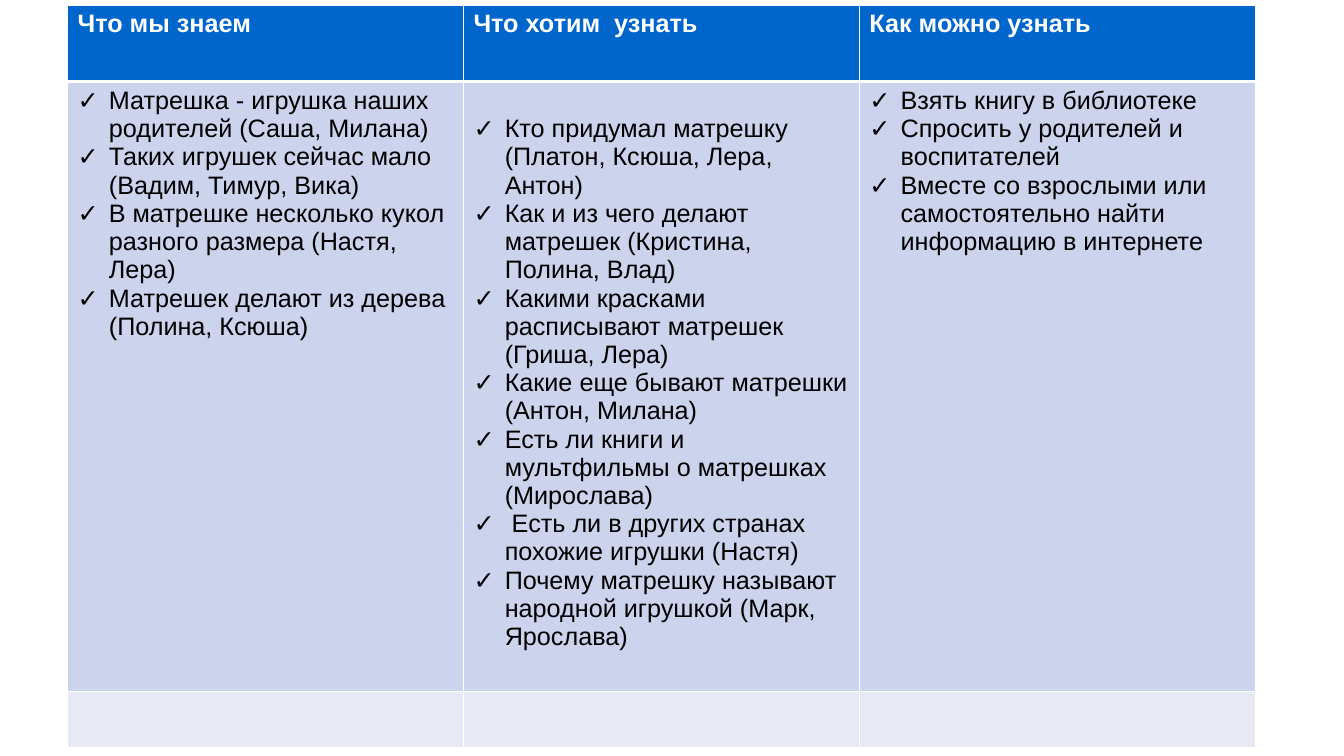
from lxml import etree
from pptx import Presentation
from pptx.dml.color import RGBColor as RGB
from pptx.oxml.ns import qn
from pptx.util import Inches as In, Pt

HUES = {"head": "0066CC", "body": "CCD3EC", "foot": "E7EAF5",
        "line": "FFFFFF", "light": "FFFFFF", "dark": "000000"}
HEADS = ["Что мы знаем", "Что хотим  узнать", "Как можно узнать"]
LISTS = [
    ["Матрешка - игрушка наших родителей (Саша, Милана)",
     "Таких игрушек сейчас мало (Вадим, Тимур, Вика)",
     "В матрешке несколько кукол разного размера (Настя, Лера)",
     "Матрешек делают из дерева (Полина, Ксюша)"],
    ["Кто придумал матрешку (Платон, Ксюша, Лера, Антон)",
     "Как и из чего делают матрешек (Кристина, Полина, Влад)",
     "Какими красками расписывают матрешек (Гриша, Лера)",
     "Какие еще бывают матрешки (Антон, Милана)",
     "Есть ли книги и мультфильмы о матрешках (Мирослава)",
     " Есть ли в других странах похожие игрушки (Настя)",
     "Почему матрешку называют народной игрушкой (Марк, Ярослава)"],
    ["Взять книгу в библиотеке",
     "Спросить у родителей и воспитателей",
     "Вместе со взрослыми или самостоятельно найти информацию в интернете"],
]
ROWS = [  # height, fill, text colour, bold, bulleted, text of each column
    (0.76, "head", "light", True, False, [[head] for head in HEADS]),
    (6.05, "body", "dark", False, True, LISTS),
    (0.56, "foot", "dark", False, False, [[], [], []]),
]
THIN, THICK = 0.96, 3
INDENT = In(0.31)


def edge(cell, widths):
    """Draw the cell borders; widths maps a side (L, R, T, B) to points."""
    props = cell._tc.get_or_add_tcPr()
    for side, width in widths.items():
        line = etree.SubElement(props, qn("a:ln" + side), w=str(Pt(width)))
        fill = etree.SubElement(line, qn("a:solidFill"))
        etree.SubElement(fill, qn("a:srgbClr"), val=HUES["line"])


def tick(para):
    """Give the paragraph a hanging check mark."""
    props = para._p.get_or_add_pPr()
    props.set("marL", str(INDENT))
    props.set("indent", str(-INDENT))
    hue = etree.SubElement(props, qn("a:buClr"))
    etree.SubElement(hue, qn("a:srgbClr"), val=HUES["dark"])
    etree.SubElement(props, qn("a:buFont"), typeface="Arial")
    etree.SubElement(props, qn("a:buChar"), char="✓")


deck = Presentation()
deck.slide_width, deck.slide_height = In(13.33), In(7.5)
slide = deck.slides.add_slide(deck.slide_layouts[6])

high = sum(row[0] for row in ROWS)
grid = slide.shapes.add_table(len(ROWS), len(HEADS), In(0.67), In(0.05),
                              In(11.78), In(high)).table
for name in ("first_row", "horz_banding"):
    setattr(grid, name, False)

for r, (tall, fill, ink, bold, marks, texts) in enumerate(ROWS):
    grid.rows[r].height = In(tall)
    for c, lines in enumerate(texts):
        cell = grid.cell(r, c)
        edge(cell, {"L": THIN, "R": THIN, "T": THICK if r == 1 else THIN,
                    "B": THICK if r == 0 else THIN})
        cell.fill.solid()
        cell.fill.fore_color.rgb = RGB.from_string(HUES[fill])
        # The middle list starts one line lower than its neighbours
        cell.margin_top = In(0.33 if marks and c == 1 else 0.05)
        for i, line in enumerate(lines):
            frame = cell.text_frame
            para = frame.add_paragraph() if i else frame.paragraphs[0]
            if marks:
                tick(para)
            run = para.add_run()
            run.text = line
            for key, val in {"name": "Arial", "size": Pt(18), "bold": bold}.items():
                setattr(run.font, key, val)
            run.font.color.rgb = RGB.from_string(HUES[ink])

deck.save("out.pptx")
